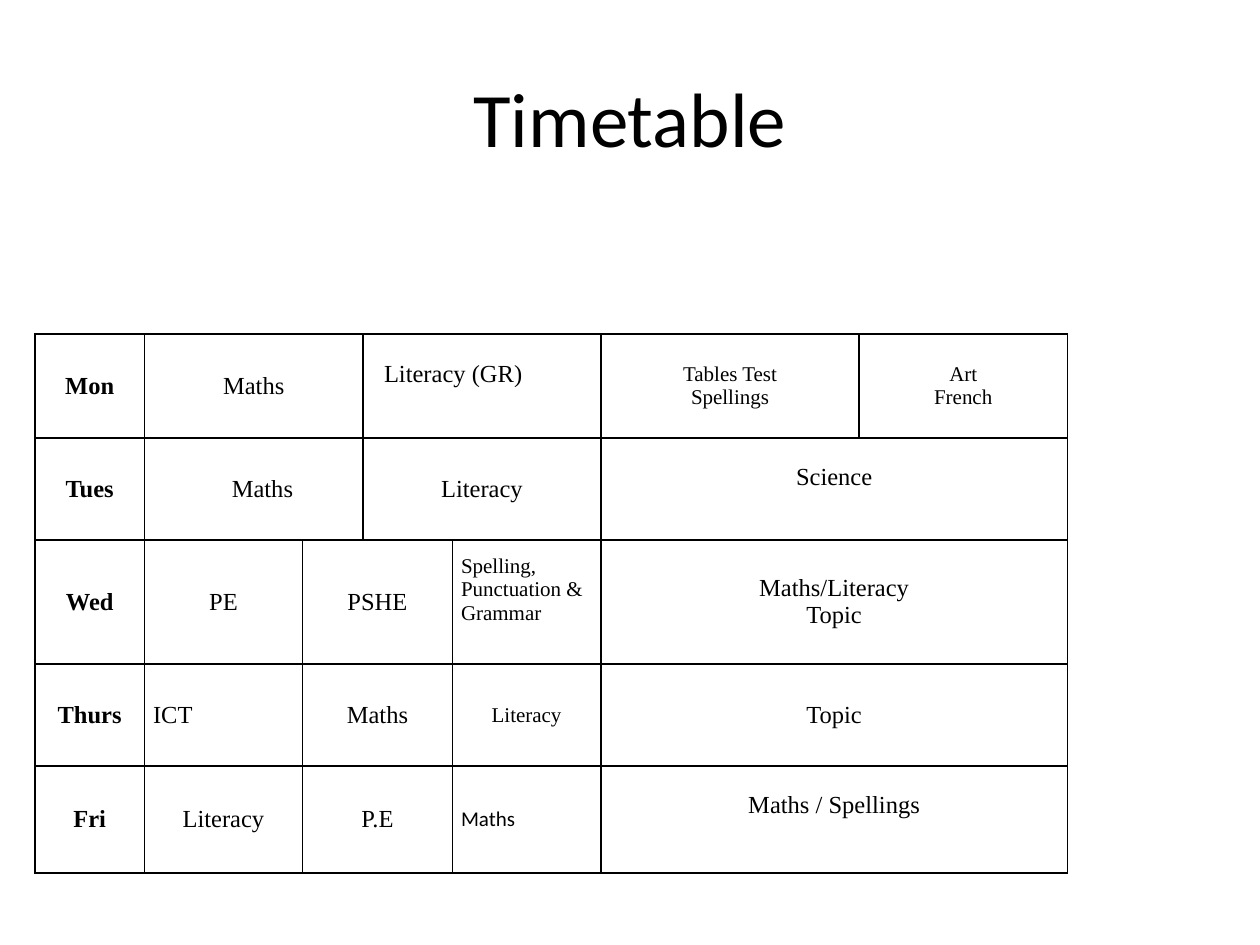
from lxml.etree import SubElement
from pptx import Presentation
from pptx.dml.color import RGBColor
from pptx.enum.text import MSO_ANCHOR, PP_ALIGN
from pptx.oxml.ns import qn
from pptx.util import Pt

# Content: each lesson is (text, columns spanned, settings that differ)
TITLE = "Timetable"
SMALL = {"size": 12}
TIMETABLE = [
    ("Mon", [("Maths", 2, {}),
             ("Literacy (GR)", 2, {"align": PP_ALIGN.LEFT, "indent": 7, "lift": 14}),
             ("Tables Test\nSpellings", 1, SMALL), ("Art\nFrench", 1, SMALL)]),
    ("Tues", [("Maths", 2, {"indent": 10}), ("Literacy", 2, {}),
              ("Science", 2, {"lift": 14})]),
    ("Wed", [("PE", 1, {}), ("PSHE", 2, {}),
             ("Spelling, Punctuation & Grammar", 1,
              {"size": 12, "align": PP_ALIGN.LEFT, "lift": 14}),
             ("Maths/Literacy\nTopic", 2, {})]),
    ("Thurs", [("ICT", 1, {"align": PP_ALIGN.LEFT}), ("Maths", 2, {}),
               ("Literacy", 1, SMALL), ("Topic", 2, {})]),
    ("Fri", [("Literacy", 1, {}), ("P.E", 2, {}),
             ("Maths", 1, {"size": 12, "align": PP_ALIGN.LEFT, "font": "Calibri"}),
             ("Maths / Spellings", 2, {"lift": 16})]),
]
COLUMN_WIDTHS = [62.5, 90.5, 34.5, 51, 85, 147.5, 119]
ROW_HEIGHTS = [59.5, 58.3, 71, 58.3, 61]
TABLE_LEFT, TABLE_TOP = 20, 190.8
CELL_MARGIN = 5
BLACK = "000000"


def colour(hex_code):
    return RGBColor.from_string(hex_code)


def style_font(font, name, size, bold=False):
    font.name, font.size, font.bold = name, Pt(size), bold
    font.color.rgb = colour(BLACK)


def add_borders(cell):
    properties = cell._tc.get_or_add_tcPr()
    for position, side in enumerate(("a:lnL", "a:lnR", "a:lnT", "a:lnB")):
        border = SubElement(properties, qn(side), w=str(Pt(1)))
        fill = SubElement(border, qn("a:solidFill"))
        SubElement(fill, qn("a:srgbClr"), val=BLACK)
        properties.insert(position, border)


def fill_cell(cell, text, size=14, align=PP_ALIGN.CENTER, font="Times New Roman",
              bold=False, indent=0, lift=0):
    cell.text_frame.text = text
    cell.vertical_anchor = MSO_ANCHOR.MIDDLE
    cell.margin_left = Pt(CELL_MARGIN + indent)
    cell.margin_right = Pt(CELL_MARGIN)
    cell.margin_top, cell.margin_bottom = Pt(0), Pt(lift)
    for paragraph in cell.text_frame.paragraphs:
        paragraph.alignment = align
        for run in paragraph.runs:
            style_font(run.font, font, size, bold)


deck = Presentation()
deck.slide_width, deck.slide_height = Pt(720), Pt(540)
slide = deck.slides.add_slide(deck.slide_layouts[5])

# Title
title = slide.shapes.title
title.left, title.top, title.width, title.height = Pt(36), Pt(21.6), Pt(648), Pt(90)
title.text_frame.text = TITLE
title.text_frame.vertical_anchor = MSO_ANCHOR.MIDDLE
heading = title.text_frame.paragraphs[0]
heading.alignment = PP_ALIGN.CENTER
style_font(heading.runs[0].font, "Calibri", 44)

# Empty grid
grid = slide.shapes.add_table(
    len(ROW_HEIGHTS), len(COLUMN_WIDTHS), Pt(TABLE_LEFT), Pt(TABLE_TOP),
    Pt(sum(COLUMN_WIDTHS)), Pt(sum(ROW_HEIGHTS))).table
grid.first_row = grid.horz_banding = False
for column, width in zip(grid.columns, COLUMN_WIDTHS):
    column.width = Pt(width)
for row, height in zip(grid.rows, ROW_HEIGHTS):
    row.height = Pt(height)
for cell in grid.iter_cells():
    cell.fill.background()
    add_borders(cell)

# Days and lessons
for row, (day, lessons) in enumerate(TIMETABLE):
    fill_cell(grid.cell(row, 0), day, bold=True)
    column = 1
    for lesson, span, settings in lessons:
        cell = grid.cell(row, column)
        if span > 1:
            cell.merge(grid.cell(row, column + span - 1))
        fill_cell(cell, lesson, **settings)
        column += span

deck.save("out.pptx")
